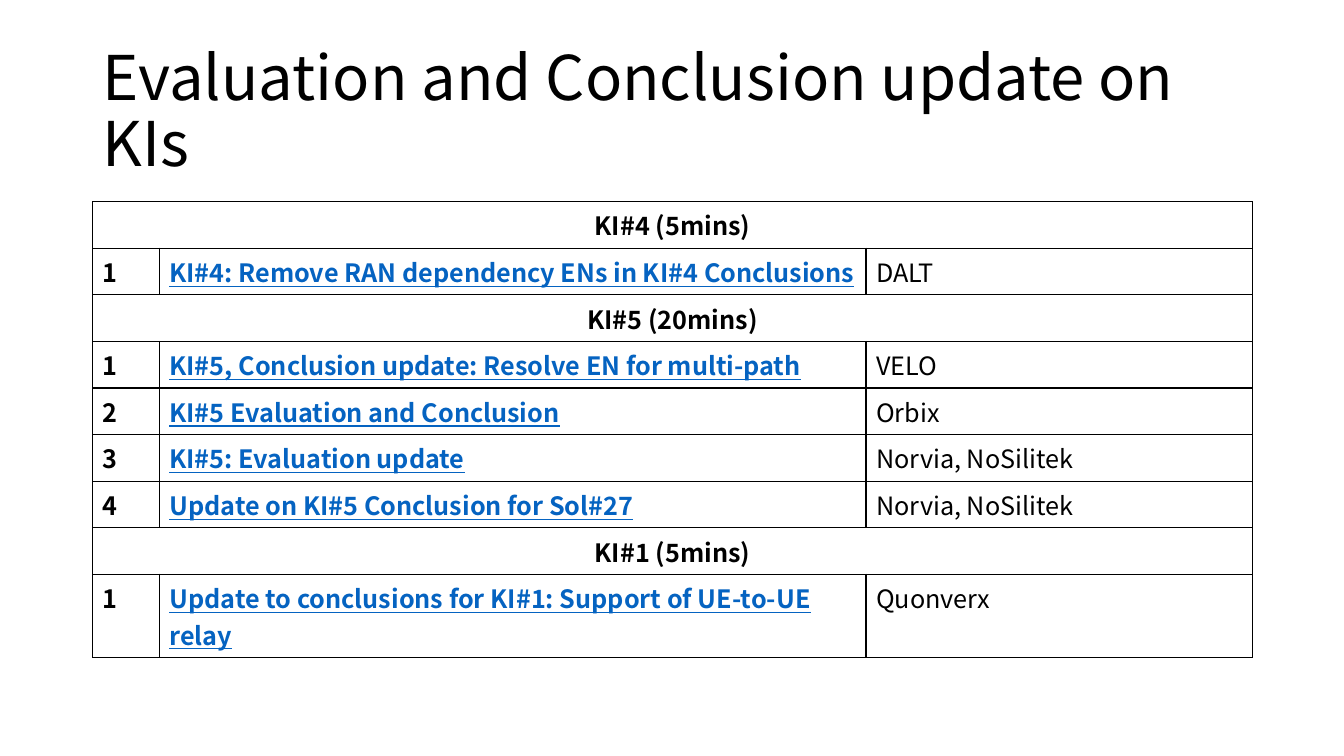
from dataclasses import dataclass

from lxml.etree import SubElement
from pptx import Presentation
from pptx.dml.color import RGBColor
from pptx.enum.text import MSO_ANCHOR, MSO_AUTO_SIZE, PP_ALIGN
from pptx.oxml.ns import qn
from pptx.util import Inches, Pt


@dataclass(frozen=True)
class Theme:
    font: str = "Noto Sans CJK SC"
    ink: str = "000000"
    link: str = "0563C1"
    title_size: int = 44
    table_size: int = 18
    border_width: int = 1


THEME = Theme()
TITLE = "Evaluation and Conclusion update on KIs"
COLUMN_WIDTHS = (0.66, 7.01, 3.83)
ROW_HEIGHT = 0.41

# Each session has a heading and its papers with their sources
SESSIONS = [
    ("KI#4 (5mins)", [
        ("KI#4: Remove RAN dependency ENs in KI#4 Conclusions", "DALT"),
    ]),
    ("KI#5 (20mins)", [
        ("KI#5, Conclusion update: Resolve EN for multi-path", "VELO"),
        ("KI#5 Evaluation and Conclusion", "Orbix"),
        ("KI#5: Evaluation update", "Norvia, NoSilitek"),
        ("Update on KI#5 Conclusion for Sol#27", "Norvia, NoSilitek"),
    ]),
    ("KI#1 (5mins)", [
        ("Update to conclusions for KI#1: Support of UE-to-UE relay", "Quonverx"),
    ]),
]


def add_span(para, text, size, color=THEME.ink, bold=False, underline=False):
    span = para.add_run()
    span.text = text
    font = span.font
    font.name, font.size = THEME.font, Pt(size)
    font.bold, font.underline = bold, underline
    font.color.rgb = RGBColor.from_string(color)


def write_cell(cell, text, align=PP_ALIGN.LEFT, **style):
    para = cell.text_frame.paragraphs[0]
    para.alignment = align
    add_span(para, text, THEME.table_size, **style)


def outline_cell(cell):
    """Draw the four borders and clear the fill of a cell."""
    properties = cell._tc.get_or_add_tcPr()
    for side in ("lnL", "lnR", "lnT", "lnB"):
        line = SubElement(properties, qn(f"a:{side}"), w=str(Pt(THEME.border_width)))
        fill = SubElement(line, qn("a:solidFill"))
        SubElement(fill, qn("a:srgbClr"), val=THEME.ink)
    cell.fill.background()


def add_title(page):
    title = page.shapes.title
    title.left, title.top = Inches(0.92), Inches(0.4)
    title.width, title.height = Inches(11.5), Inches(1.45)
    frame = title.text_frame
    frame.word_wrap = True
    frame.auto_size = MSO_AUTO_SIZE.NONE
    frame.vertical_anchor = MSO_ANCHOR.MIDDLE
    para = frame.paragraphs[0]
    para.alignment = PP_ALIGN.LEFT
    para.line_spacing = 0.9
    add_span(para, TITLE, THEME.title_size)


def add_agenda(page):
    row_count = sum(1 + len(papers) for _, papers in SESSIONS)
    table = page.shapes.add_table(
        row_count, len(COLUMN_WIDTHS), Inches(0.92), Inches(2),
        Inches(sum(COLUMN_WIDTHS)), Inches(ROW_HEIGHT * row_count)).table
    table.first_row = table.horz_banding = False
    for column, width in zip(table.columns, COLUMN_WIDTHS):
        column.width = Inches(width)
    for cell in table.iter_cells():
        outline_cell(cell)

    # Merged heading row, then one numbered row per paper
    row = 0
    for heading, papers in SESSIONS:
        table.cell(row, 0).merge(table.cell(row, len(COLUMN_WIDTHS) - 1))
        write_cell(table.cell(row, 0), heading, PP_ALIGN.CENTER, bold=True)
        for number, (paper, source) in enumerate(papers, start=1):
            write_cell(table.cell(row + number, 0), str(number), bold=True)
            write_cell(table.cell(row + number, 1), paper,
                       color=THEME.link, bold=True, underline=True)
            write_cell(table.cell(row + number, 2), source)
        row += 1 + len(papers)


def main():
    deck = Presentation()
    deck.slide_width, deck.slide_height = Inches(13.33), Inches(7.5)
    page = deck.slides.add_slide(deck.slide_layouts.get_by_name("Title Only"))
    add_title(page)
    add_agenda(page)
    deck.save("out.pptx")


if __name__ == "__main__":
    main()
